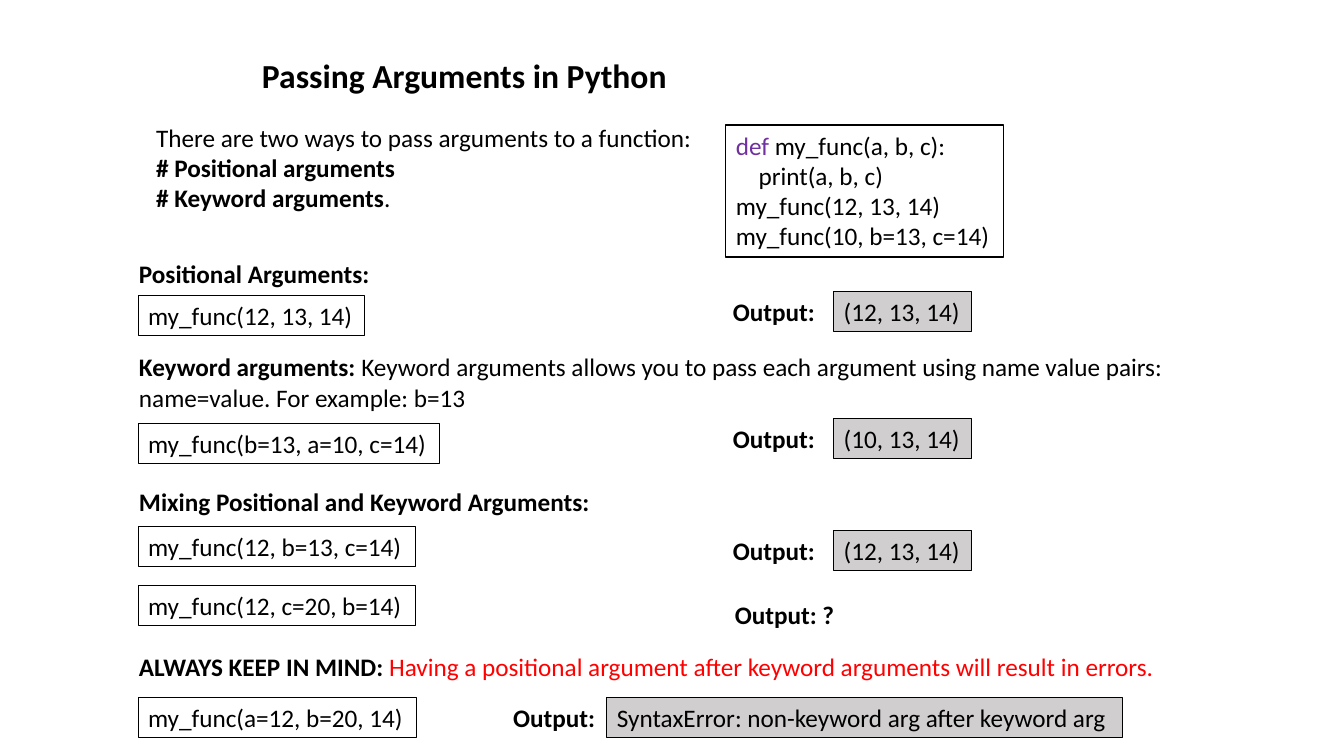
from pptx import Presentation
from pptx.dml.color import RGBColor
from pptx.enum.shapes import MSO_SHAPE as Shape
from pptx.enum.text import MSO_ANCHOR as Anchor, MSO_AUTO_SIZE as Fit, PP_ALIGN as Align
from pptx.util import Inches, Pt

BLACK = RGBColor(0x00, 0x00, 0x00)
RED = RGBColor(0xFF, 0x00, 0x00)
PURPLE = RGBColor(0x70, 0x30, 0xA0)
GRAY = RGBColor(0xD0, 0xCE, 0xCE)
FONT = "Calibri"
ROW = 0.4
LEFT = 1.28
CODE = 1.37
LABEL = 7.17
RESULT = 8.27

TITLE = [[("Passing Arguments in Python", True, BLACK)]]
INTRO = [
    [("There are two ways to pass arguments to a function:", False, BLACK)],
    [("# Positional arguments", True, BLACK)],
    [("# Keyword arguments", True, BLACK), (".", False, BLACK)],
]
SAMPLE = [
    [("def ", False, PURPLE), ("my_func(a, b, c):", False, BLACK)],
    [("    print(a, b, c)", False, BLACK)],
    [("my_func(12, 13, 14)", False, BLACK)],
    [("my_func(10, b=13, c=14)", False, BLACK)],
]
KEYWORD = [
    [("Keyword arguments: ", True, BLACK),
     ("Keyword arguments allows you to pass each argument using name value pairs:", False, BLACK)],
    [("name=value. For example: b=13", False, BLACK)],
]
WARNING = [
    [("ALWAYS KEEP IN MIND: ", True, BLACK),
     ("Having a positional argument after keyword arguments will result in errors.", False, RED)],
]
HEADS = [
    ("Positional Arguments:", 2.51, 2.56),
    ("Mixing Positional and Keyword Arguments:", 4.78, 4.71),
]
CALLS = [
    ("my_func(12, 13, 14)", 2.93, 2.25),
    ("my_func(b=13, a=10, c=14)", 4.2, 2.99),
    ("my_func(12, b=13, c=14)", 5.22, 2.75),
    ("my_func(12, c=20, b=14)", 5.81, 2.75),
    ("my_func(a=12, b=20, 14)", 6.92, 2.76),
]
OUTPUTS = [
    ("(12, 13, 14)", LABEL, RESULT, 2.89, 1.37),
    ("(10, 13, 14)", LABEL, RESULT, 4.15, 1.37),
    ("(12, 13, 14)", LABEL, RESULT, 5.26, 1.37),
    ("SyntaxError: non-keyword arg after keyword arg", 4.99, 6.02, 6.92, 5.11),
]

deck = Presentation()
deck.slide_width, deck.slide_height = Inches(13.33), Inches(7.5)
slide = deck.slides.add_slide(deck.slide_layouts[6])


def write(box, lines, size):
    frame = box.text_frame
    frame.word_wrap = False
    frame.auto_size = Fit.SHAPE_TO_FIT_TEXT
    frame.vertical_anchor = Anchor.TOP
    for i, line in enumerate(lines):
        para = frame.paragraphs[0] if i == 0 else frame.add_paragraph()
        para.alignment = Align.LEFT
        para.font.name = FONT
        para.font.size = Pt(size)
        for text, bold, color in line:
            run = para.add_run()
            run.text = text
            run.font.bold = bold
            run.font.color.rgb = color


def label(lines, x, y, w, h=ROW, size=18):
    box = slide.shapes.add_textbox(Inches(x), Inches(y), Inches(w), Inches(h))
    write(box, lines, size)


def frame(lines, x, y, w, h=ROW, fill=None):
    box = slide.shapes.add_shape(Shape.RECTANGLE, Inches(x), Inches(y), Inches(w), Inches(h))
    box.shadow.inherit = False
    if fill is None:
        box.fill.background()
    else:
        box.fill.solid()
        box.fill.fore_color.rgb = fill
    box.line.color.rgb = BLACK
    box.line.width = Pt(0.75)
    write(box, lines, 18)


label(TITLE, 2.5, 0.5, 4.35, 0.5, 24)
label(INTRO, 1.45, 1.16, 5.63, 1.01)
frame(SAMPLE, 7.2, 1.24, 2.75, 1.31)
label(KEYWORD, LEFT, 3.44, 10.52, 0.71)
label(WARNING, LEFT, 6.41, 10.6)
for text, y, w in HEADS:
    label([[(text, True, BLACK)]], LEFT, y, w)
for text, y, w in CALLS:
    frame([[(text, False, BLACK)]], CODE, y, w)
for text, tag, x, y, w in OUTPUTS:
    label([[("Output:", True, BLACK)]], tag, y, 1.02)
    frame([[(text, False, BLACK)]], x, y, w, fill=GRAY)
label([[("Output: ?", True, BLACK)]], 7.19, 5.9, 1.2)

deck.save("out.pptx")
